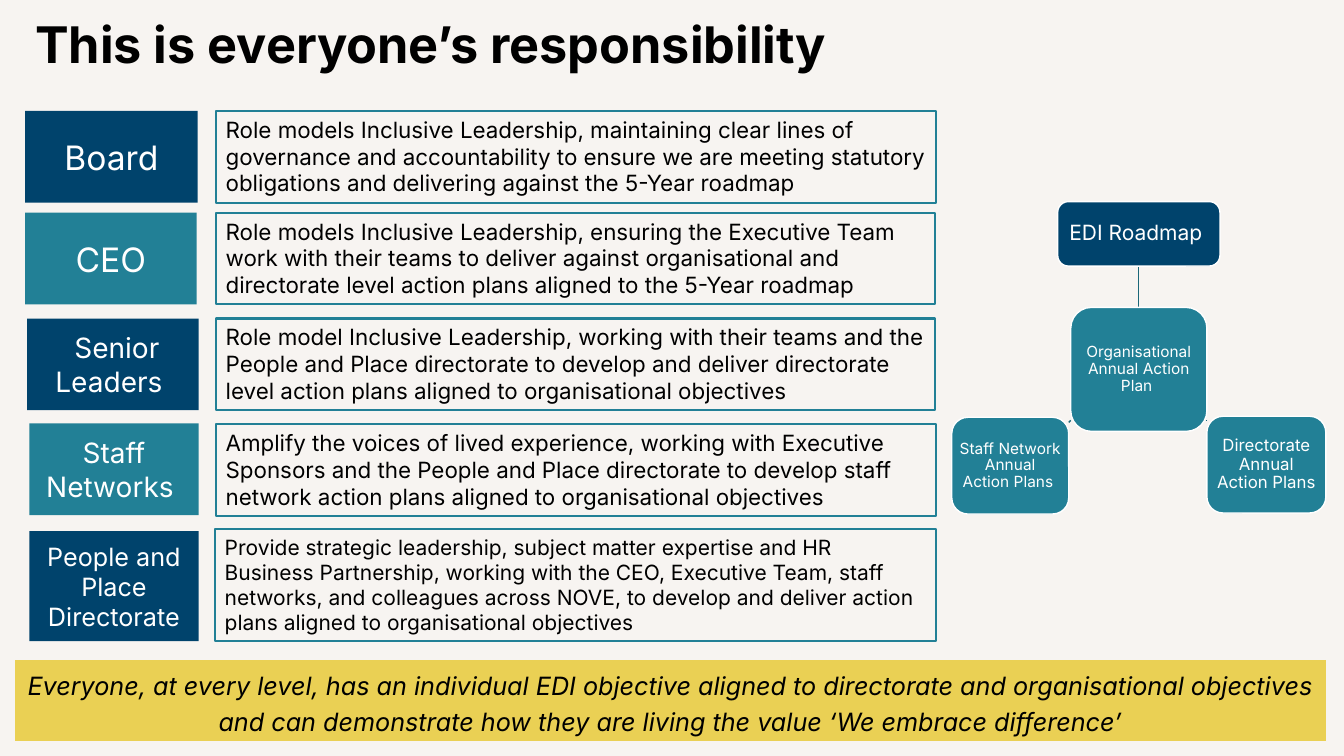
from dataclasses import dataclass

from pptx import Presentation
from pptx.dml.color import RGBColor
from pptx.enum.shapes import MSO_CONNECTOR as CONN, MSO_SHAPE as SHAPE
from pptx.enum.text import MSO_ANCHOR as ANCHOR, PP_ALIGN as ALIGN
from pptx.oxml.ns import qn
from pptx.util import Inches, Pt
from lxml.etree import SubElement

NAVY = RGBColor(0x00, 0x43, 0x6C)
TEAL = RGBColor(0x22, 0x80, 0x96)
DARK_TEAL = RGBColor(0x1B, 0x67, 0x78)
YELLOW = RGBColor(0xEA, 0xD0, 0x54)
CREAM = RGBColor(0xF7, 0xF4, 0xF1)
WHITE = RGBColor(0xFF, 0xFF, 0xFF)
BLACK = RGBColor(0x00, 0x00, 0x00)

Box = tuple[float, float, float, float]


@dataclass
class Role:
    label: str
    label_size: int
    label_box: Box
    fill: RGBColor
    duty: str
    duty_box: Box
    duty_size: int = 16


@dataclass
class Plan:
    text: str
    size: int
    box: Box
    fill: RGBColor = TEAL
    inset: float = 0.03


@dataclass
class Link:
    start: tuple[float, float]
    end: tuple[float, float]


ROLES = [
    Role("Board", 24, (0.25, 1.1, 1.71, 0.91), NAVY,
         "Role models Inclusive Leadership, maintaining clear lines of governance and "
         "accountability to ensure we are meeting statutory obligations and delivering "
         "against the 5-Year roadmap", (2.14, 1.1, 7.14, 0.91)),
    Role("CEO", 24, (0.25, 2.11, 1.7, 0.91), TEAL,
         "Role models Inclusive Leadership, ensuring the Executive Team work with their "
         "teams to deliver against organisational and directorate level action plans "
         "aligned to the 5-Year roadmap", (2.14, 2.11, 7.13, 0.91)),
    Role(" Senior Leaders ", 20, (0.27, 3.16, 1.7, 0.91), NAVY,
         "Role model Inclusive Leadership, working with their teams and the People and "
         "Place directorate to develop and deliver directorate level action plans "
         "aligned to organisational objectives", (2.14, 3.16, 7.13, 0.91)),
    Role("Staff Networks ", 20, (0.29, 4.2, 1.68, 0.91), TEAL,
         "Amplify the voices of lived experience, working with Executive Sponsors and "
         "the People and Place directorate to develop staff network action plans "
         "aligned to organisational objectives", (2.14, 4.21, 7.14, 0.91)),
    Role("People and Place Directorate", 18, (0.29, 5.27, 1.68, 1.09), NAVY,
         "Provide strategic leadership, subject matter expertise and HR Business "
         "Partnership, working with the CEO, Executive Team, staff networks, and "
         "colleagues across NOVE, to develop and deliver action plans aligned to "
         "organisational objectives", (2.13, 5.25, 7.15, 1.11), 15),
]
PLANS = [
    Plan("Organisational Annual Action Plan ", 11, (10.62, 3.05, 1.35, 1.23)),
    Plan("EDI Roadmap ", 15, (10.49, 2, 1.61, 0.64), NAVY, 0.04),
    Plan("Directorate Annual Action Plans", 12, (11.97, 4.13, 1.18, 0.96)),
    Plan("Staff Network Annual Action Plans ", 11, (9.44, 4.14, 1.16, 0.96)),
]
LINKS = [
    Link((11.29, 3.05), (11.29, 2.64)),
    Link((11.96, 4.17), (11.97, 4.17)),
    Link((10.62, 4.17), (10.6, 4.19)),
]


def write(sp, text: str, size: int, color: RGBColor, align=ALIGN.CENTER,
          anchor=ANCHOR.MIDDLE, spacing: float = 1.0, **style) -> None:
    tf = sp.text_frame
    tf.word_wrap = True
    tf.vertical_anchor = anchor
    p = tf.paragraphs[0]
    p.alignment = align
    p.line_spacing = spacing
    r = p.add_run()
    r.text = text
    r.font.color.rgb = color
    for name, value in {"name": "Inter", "size": Pt(size), **style}.items():
        setattr(r.font, name, value)


def add_box(s, box: Box, fill: RGBColor | None = None, line: RGBColor | None = None,
            width: float = 1, kind=SHAPE.RECTANGLE):
    sp = s.shapes.add_shape(kind, *map(Inches, box))
    sp.shadow.inherit = False
    if fill is None:
        sp.fill.background()
    else:
        sp.fill.solid()
        sp.fill.fore_color.rgb = fill
    if line is None:
        sp.line.fill.background()
    else:
        sp.line.color.rgb = line
        sp.line.width = Pt(width)
    return sp


def add_role(s, role: Role) -> None:
    write(add_box(s, role.label_box, role.fill), role.label, role.label_size, WHITE)
    write(add_box(s, role.duty_box, line=TEAL, width=1.5), role.duty, role.duty_size,
          BLACK, ALIGN.LEFT, ANCHOR.TOP)


def add_plan(s, plan: Plan) -> None:
    sp = add_box(s, plan.box, plan.fill, WHITE, kind=SHAPE.ROUNDED_RECTANGLE)
    for side in ("left", "top", "right", "bottom"):
        setattr(sp.text_frame, f"margin_{side}", Inches(plan.inset))
    write(sp, plan.text, plan.size, WHITE, spacing=0.9)


def add_link(s, link: Link) -> None:
    cx = s.shapes.add_connector(CONN.STRAIGHT, *map(Inches, link.start + link.end))
    cx.line.color.rgb = DARK_TEAL
    cx.line.width = Pt(1)
    SubElement(cx._element.spPr, qn("a:effectLst"))


def main() -> None:
    prs = Presentation()
    prs.slide_width, prs.slide_height = Inches(13.33), Inches(7.5)
    s = prs.slides.add_slide(prs.slide_layouts[6])
    s.background.fill.solid()
    s.background.fill.fore_color.rgb = CREAM

    # Title
    title = s.shapes.add_textbox(*map(Inches, (0.25, 0.15, 12.85, 0.91)))
    write(title, "This is everyone’s responsibility", 36, BLACK, ALIGN.LEFT,
          ANCHOR.TOP, 0.9, bold=True)

    # Roles and what each is responsible for
    for role in ROLES:
        add_role(s, role)

    # Hierarchy of plans
    for link in LINKS:
        add_link(s, link)
    for plan in PLANS:
        add_plan(s, plan)

    # Closing banner
    banner = add_box(s, (0.15, 6.55, 13, 0.8), YELLOW)
    write(banner, "Everyone, at every level, has an individual EDI objective aligned to "
          "directorate and organisational objectives and can demonstrate how they are "
          "living the value ‘We embrace difference’", 18, BLACK, spacing=1.2, italic=True)

    prs.save("out.pptx")


if __name__ == "__main__":
    main()
